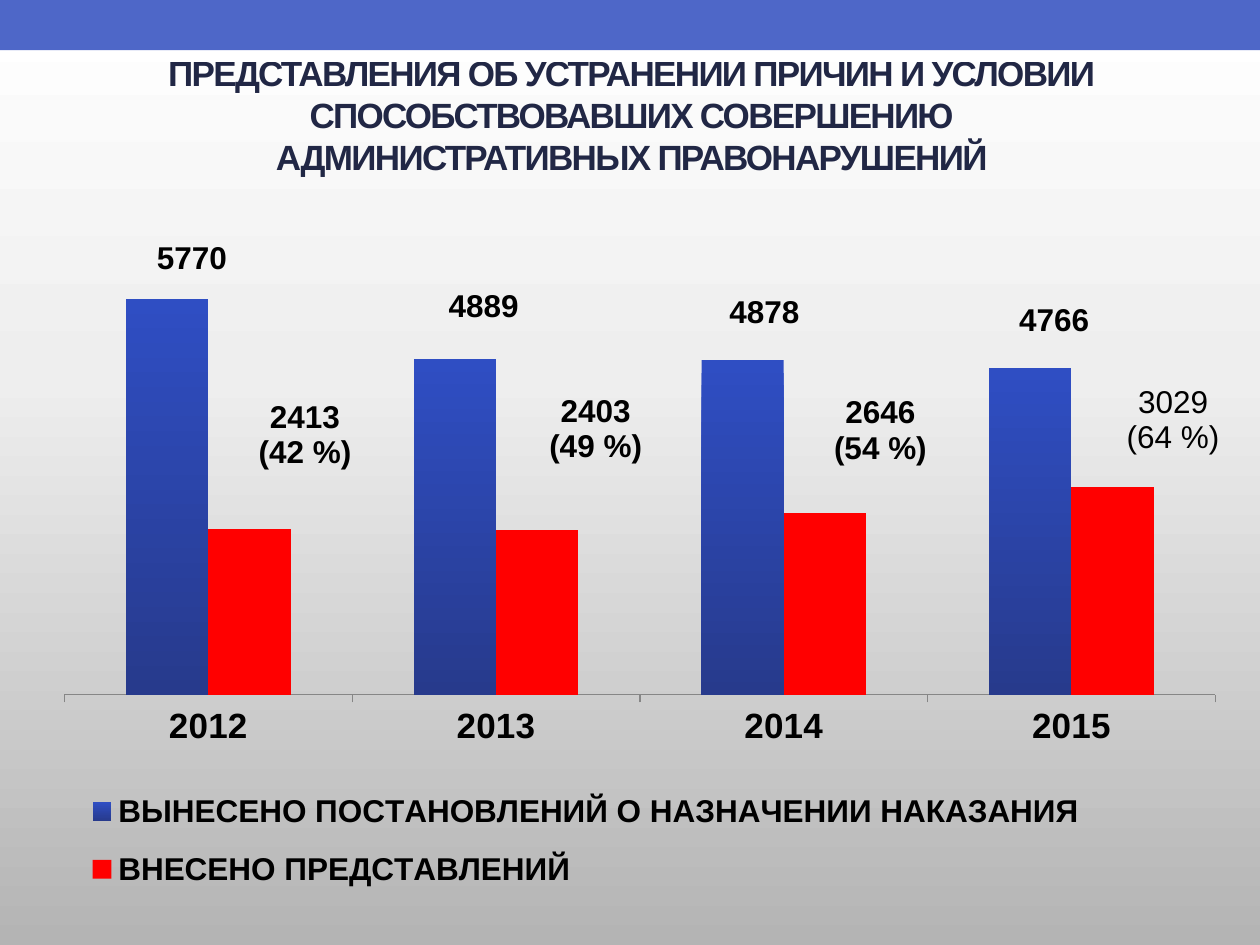
import copy

import lxml.etree
import pptx
import pptx.chart.data
import pptx.dml.color
import pptx.enum.chart
import pptx.enum.shapes
import pptx.enum.text
import pptx.oxml.ns
import pptx.util

Cm, Pt = pptx.util.Cm, pptx.util.Pt
RGB = pptx.dml.color.RGBColor
qn = pptx.oxml.ns.qn

WHITE = RGB(0xFF, 0xFF, 0xFF)
PALE = RGB(0xEE, 0xEE, 0xEE)
GREY = RGB(0xB4, 0xB4, 0xB4)
LINE = RGB(0x86, 0x86, 0x86)
BLACK = RGB(0, 0, 0)
NAVY = RGB(0x21, 0x27, 0x45)
BLUE = RGB(0x4E, 0x67, 0xC8)
BRIGHT = RGB(0x2F, 0x4E, 0xC3)
DEEP = RGB(0x27, 0x3A, 0x8C)
RED = RGB(0xFF, 0, 0)

FACE = "Arial"
TITLE = ["ПРЕДСТАВЛЕНИЯ ОБ УСТРАНЕНИИ ПРИЧИН И УСЛОВИЙ",
         "СПОСОБСТВОВАВШИХ СОВЕРШЕНИЮ",
         "АДМИНИСТРАТИВНЫХ ПРАВОНАРУШЕНИЙ"]
YEARS = ["2012", "2013", "2014", "2015"]
FINES = [5770, 4889, 4878, 4766]
NOTES = [2413, 2403, 2646, 3029]
SHARES = [42, 49, 54, 64]
SHIFTS = [(0.5, -0.36), (0.58, -0.61), (0.44, -0.52), (0.48, -0.5),
          (1.12, -1.09), (1.18, -1.23), (1.12, -0.86), (1.22, -0.54)]


def style(font, size, bold=True, color=BLACK):
    """Give a font its face, size, weight and colour."""
    font.name, font.size, font.bold = FACE, Pt(size), bold
    font.color.rgb = color


def shade(fill, stops):
    """Colour the stops of a gradient that runs from top to bottom."""
    fill.gradient_angle = 270
    for stop, (spot, color) in zip(fill.gradient_stops, stops):
        stop.position = spot
        stop.color.rgb = color


def place(node, index, **parts):
    """Give a chart part a manual layout."""
    for old in node.findall(qn("c:layout")):
        node.remove(old)
    layout = lxml.etree.Element(qn("c:layout"))
    manual = lxml.etree.SubElement(layout, qn("c:manualLayout"))
    for name, value in parts.items():
        lxml.etree.SubElement(manual, qn("c:" + name)).set("val", str(value))
    node.insert(index, layout)


def paint(slide):
    """Fill the background with a grey gradient."""
    fill = slide.background.fill
    fill.gradient()
    stops = slide.element.find(".//" + qn("a:gsLst"))
    stops.append(copy.deepcopy(stops[-1]))
    shade(fill, [(0, WHITE), (0.4, PALE), (1, GREY)])


def band(slide, left, top, width, height):
    """Draw the blue band with its white edge inside the box."""
    for start, end, color in ((0.5, 1, WHITE), (0, 0.81, BLUE)):
        bar = slide.shapes.add_shape(
            pptx.enum.shapes.MSO_SHAPE.RECTANGLE, Cm(left),
            Cm(top + start * height), Cm(width), Cm((end - start) * height))
        bar.shadow.inherit = False
        bar.fill.solid()
        bar.fill.fore_color.rgb = color
        bar.line.fill.background()


def head(slide, left, top, width, height):
    """Move, fill and format the title."""
    title = slide.shapes.title
    title.left, title.top = Cm(left), Cm(top)
    title.width, title.height = Cm(width), Cm(height)
    frame = title.text_frame
    frame.text = "\n".join(TITLE)
    frame.word_wrap = True
    frame.auto_size = pptx.enum.text.MSO_AUTO_SIZE.NONE
    frame.vertical_anchor = pptx.enum.text.MSO_ANCHOR.MIDDLE
    frame.margin_top, frame.margin_bottom = 0, Cm(0.82)
    for para in frame.paragraphs:
        para.alignment = pptx.enum.text.PP_ALIGN.CENTER
        for run in para.runs:
            style(run.font, 20, color=NAVY)
            run.font._element.set("spc", "-100")


def label(chart, width, height):
    """Label each column and shift the labels off the bars."""
    fines, notes = chart.plots[0].series
    end = pptx.enum.chart.XL_LABEL_POSITION.OUTSIDE_END
    for row in (fines, notes):
        row.data_labels.show_value = True
        style(row.data_labels.font, 18)
    for i, (note, share) in enumerate(zip(NOTES, SHARES)):
        mark = fines.points[i].data_label
        style(mark.font, 18)
        mark.position = end
        mark = notes.points[i].data_label
        mark.text_frame.text = f"{note}\n({share} %)"
        for para in mark.text_frame.paragraphs:
            style(para.runs[0].font, 18, bold=i < len(NOTES) - 1)
        mark.position = end
    for node, (x, y) in zip(chart.element.iter(qn("c:dLbl")), SHIFTS):
        place(node, 1, x=round(x / width, 4), y=round(y / height, 4))
    for lead in chart.element.iter(qn("c:showLeaderLines")):
        lead.set("val", "0")


def graph(slide, left, top, width, height):
    """Add the column chart in the box."""
    data = pptx.chart.data.CategoryChartData(number_format="0")
    data.categories = YEARS
    data.add_series("ВЫНЕСЕНО ПОСТАНОВЛЕНИЙ О НАЗНАЧЕНИИ НАКАЗАНИЯ", FINES)
    data.add_series("ВНЕСЕНО ПРЕДСТАВЛЕНИЙ", NOTES)
    chart = slide.shapes.add_chart(
        pptx.enum.chart.XL_CHART_TYPE.COLUMN_CLUSTERED,
        Cm(left), Cm(top), Cm(width), Cm(height), data).chart
    chart.has_title = False
    style(chart.font, 18, bold=False)

    plot = chart.plots[0]
    plot.gap_width, plot.overlap, plot.vary_by_categories = 150, 0, False
    fines, notes = plot.series
    fines.format.fill.gradient()
    shade(fines.format.fill, [(0, BRIGHT), (1, DEEP)])
    notes.format.fill.solid()
    notes.format.fill.fore_color.rgb = RED

    years, scale = chart.category_axis, chart.value_axis
    style(years.tick_labels.font, 20)
    years.major_tick_mark = pptx.enum.chart.XL_TICK_MARK.OUTSIDE
    years.format.line.color.rgb = LINE
    scale.minimum_scale, scale.maximum_scale = 0, 7000
    scale.has_major_gridlines = scale.visible = False

    chart.has_legend = True
    chart.legend.position = pptx.enum.chart.XL_LEGEND_POSITION.RIGHT
    chart.legend.include_in_layout = False
    style(chart.legend.font, 18)
    place(chart.element.find(".//" + qn("c:legend")), 1,
          xMode="edge", yMode="edge", x=0.02, y=0.81, w=0.87, h=0.19)
    place(chart.element.find(".//" + qn("c:plotArea")), 0,
          layoutTarget="inner", xMode="edge", yMode="edge",
          x=round(0.41 / width, 4), y=round(0.6 / height, 4),
          w=round(23.2 / width, 4), h=round(9.68 / height, 4))
    label(chart, width, height)


def main():
    """Build the slide and save it."""
    deck = pptx.Presentation()
    deck.slide_width, deck.slide_height = Cm(25.4), Cm(19.05)
    slide = deck.slides.add_slide(deck.slide_layouts[5])
    paint(slide)
    band(slide, 0, 0, 25.4, 1.25)
    head(slide, 1.3, 1.52, 22.86, 2.39)
    graph(slide, 0.89, 3.73, 24, 14.6)
    deck.save("out.pptx")


if __name__ == "__main__":
    main()
